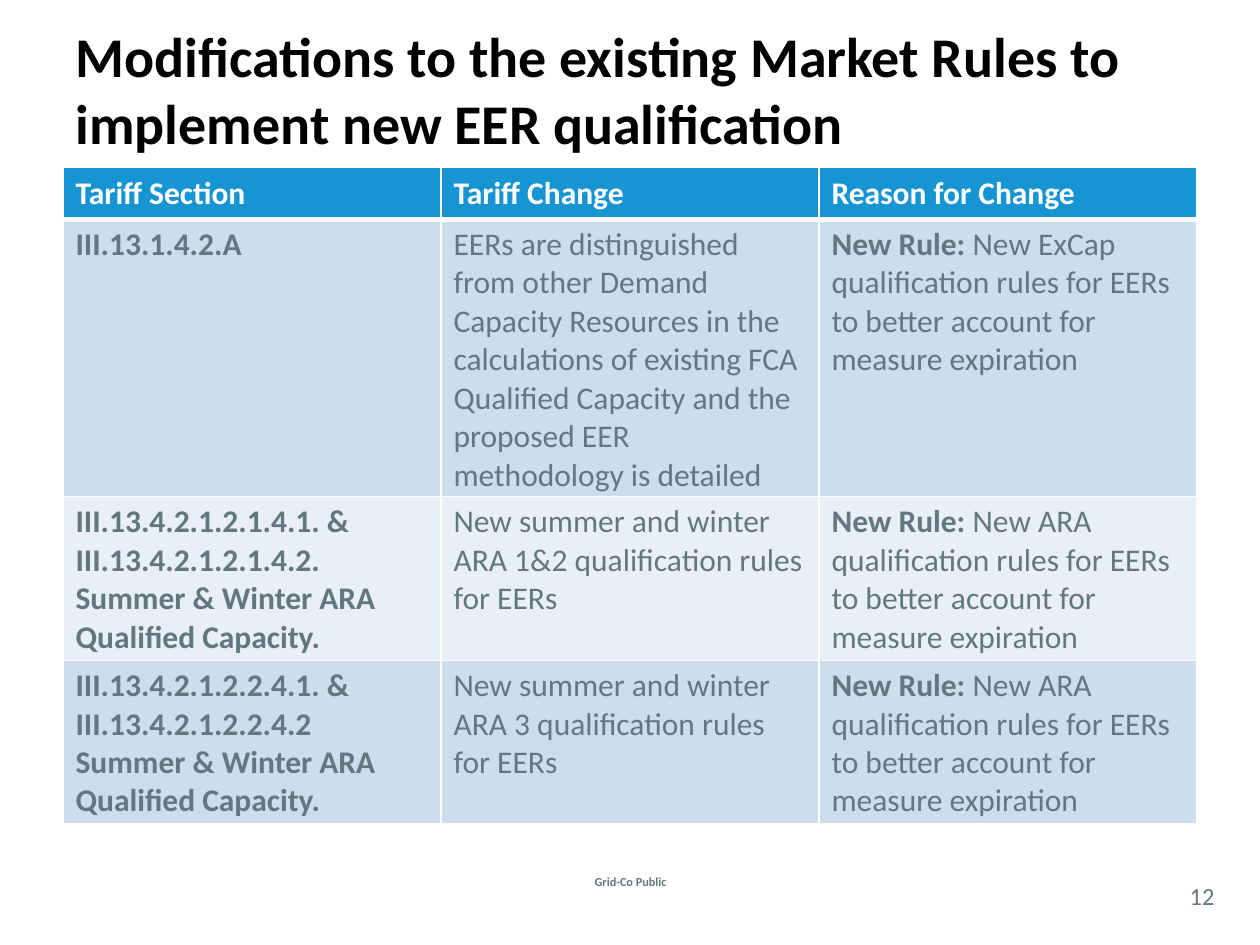
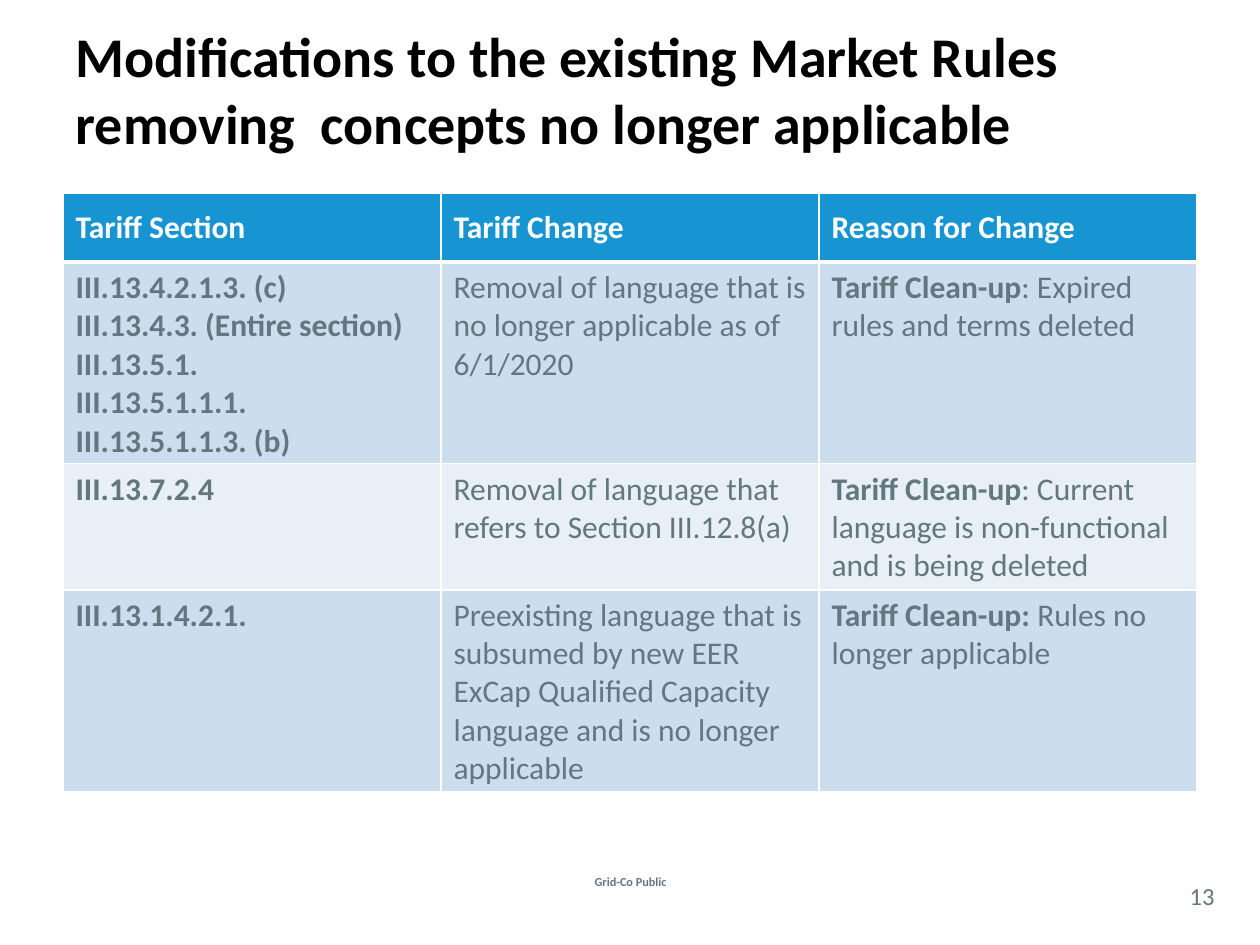
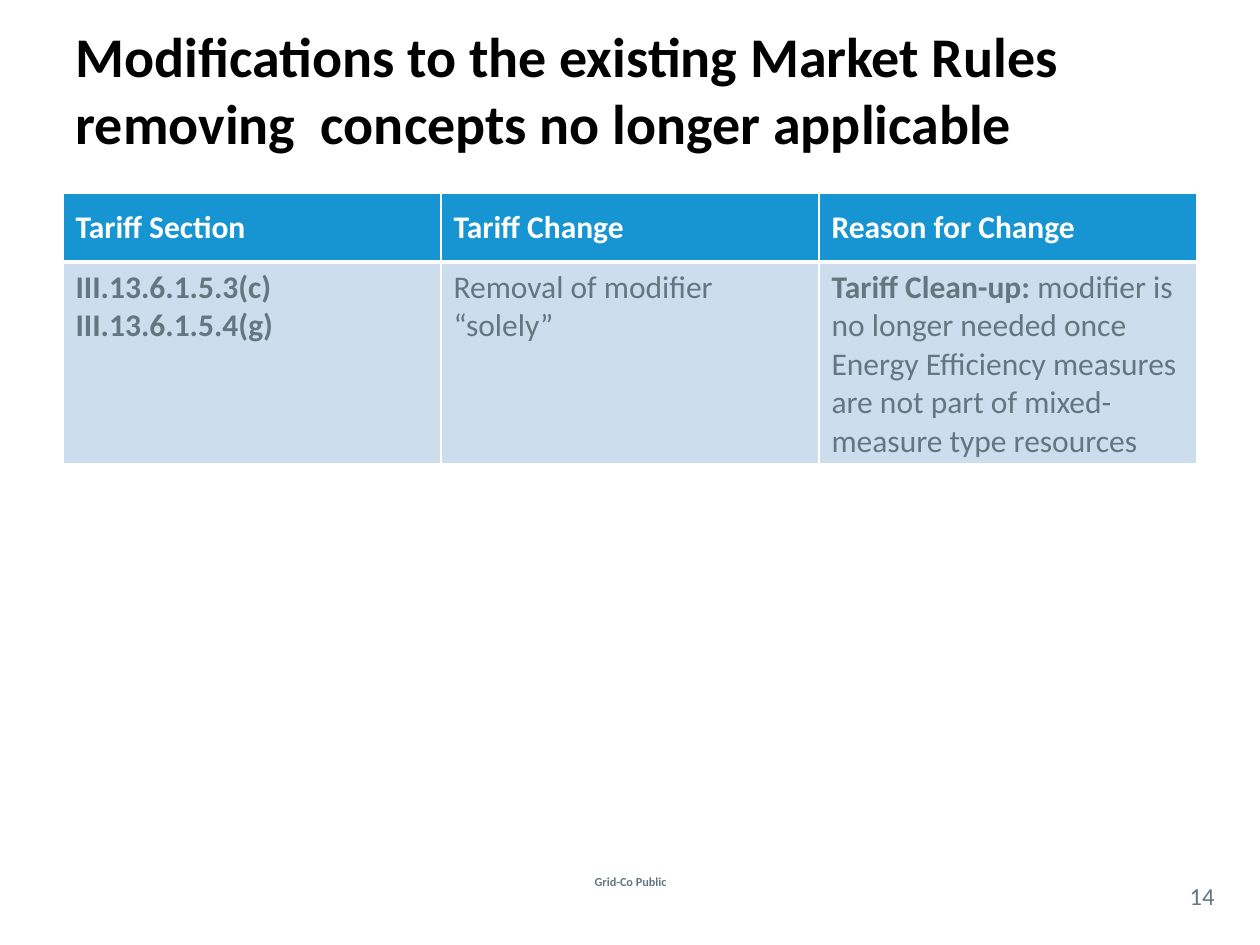
"""Build three slides that list tariff changes by section, change and reason."""
from lxml.etree import SubElement
from pptx import Presentation
from pptx.dml.color import RGBColor
from pptx.enum.text import MSO_ANCHOR, MSO_AUTO_SIZE, PP_ALIGN
from pptx.oxml.ns import qn
from pptx.util import Emu, Pt

PX = 9144
FONT = "Calibri"
BLACK = RGBColor(0x00, 0x00, 0x00)
WHITE = RGBColor(0xFF, 0xFF, 0xFF)
SLATE = RGBColor(0x62, 0x77, 0x7F)
BLUE = RGBColor(0x17, 0x95, 0xD2)
BANDS = [RGBColor(0xE8, 0xEF, 0xF7), RGBColor(0xCC, 0xDD, 0xEE)]

LEFT, COLUMN = 50, 300
LINE, CELL_MARGINS = 30, 10
HEADINGS = ["Tariff Section", "Tariff Change", "Reason for Change"]
FOOTER = "Grid-Co Public"
FIRST_NUMBER = 12
REMOVING = "Modifications to the existing Market Rules removing  concepts no longer applicable"
ARA_REASON = " New ARA qualification rules for EERs to better account for measure expiration"

SLIDES = [
    ("Modifications to the existing Market Rules to implement new EER qualification", 133, 41, [
        (7, "III.13.1.4.2.A",
         "EERs are distinguished from other Demand Capacity Resources in the calculations of "
         "existing FCA Qualified Capacity and the proposed EER methodology is detailed",
         "New Rule:",
         " New ExCap qualification rules for EERs to better account for measure expiration"),
        (4, "III.13.4.2.1.2.1.4.1. & III.13.4.2.1.2.1.4.2.\nSummer & Winter ARA Qualified Capacity.",
         "New summer and winter ARA 1&2 qualification rules for EERs", "New Rule:", ARA_REASON),
        (4, "III.13.4.2.1.2.2.4.1. & III.13.4.2.1.2.2.4.2\nSummer & Winter ARA Qualified Capacity.",
         "New summer and winter ARA 3 qualification rules for EERs", "New Rule:", ARA_REASON),
    ]),
    (REMOVING, 153, 55, [
        (5, "III.13.4.2.1.3. (c)\nIII.13.4.3. (Entire section)\nIII.13.5.1.\n"
         "III.13.5.1.1.1.\nIII.13.5.1.1.3. (b)",
         "Removal of language that is no longer applicable as of 6/1/2020",
         "Tariff Clean-up", ": Expired rules and terms deleted"),
        (3, "III.13.7.2.4", "Removal of language that refers to Section III.12.8(a)",
         "Tariff Clean-up", ": Current language is non-functional and is being deleted"),
        (5, "III.13.1.4.2.1.",
         "Preexisting language that is subsumed by new EER ExCap Qualified Capacity language "
         "and is no longer applicable",
         "Tariff Clean-up:", " Rules no longer applicable"),
    ]),
    (REMOVING, 153, 55, [
        (5, "III.13.6.1.5.3(c)\nIII.13.6.1.5.4(g)", "Removal of modifier “solely”",
         "Tariff Clean-up:",
         " modifier is no longer needed once Energy Efficiency measures are not part of "
         "mixed-measure type resources"),
    ]),
]


def style_text(frame, size, color, bold=None, align=PP_ALIGN.LEFT):
    """Format every run of a text frame; bold=None keeps each run's weight."""
    for paragraph in frame.paragraphs:
        paragraph.alignment = align
        for run in paragraph.runs:
            run.font.name = FONT
            run.font.size = Pt(size)
            run.font.color.rgb = color
            if bold is not None:
                run.font.bold = bold


def style_cell(cell, fill, row_index):
    """Give a cell white borders, heavier under the heading row, and a fill."""
    heavy_side = {0: "lnB", 1: "lnT"}.get(row_index)
    properties = cell._tc.get_or_add_tcPr()
    for side in ("lnL", "lnR", "lnT", "lnB"):
        width = Pt(3 if side == heavy_side else 1)
        border = SubElement(properties, qn(f"a:{side}"), w=str(width))
        paint = SubElement(border, qn("a:solidFill"))
        SubElement(paint, qn("a:srgbClr"), val=str(WHITE))
    cell.fill.solid()
    cell.fill.fore_color.rgb = fill


deck = Presentation()
deck.slide_width = Emu(1000 * PX)
deck.slide_height = Emu(750 * PX)

for number, (title_text, top, heading_height, changes) in enumerate(SLIDES, FIRST_NUMBER):
    page = deck.slides.add_slide(deck.slide_layouts[5])

    title = page.shapes.title
    title.left, title.top = Emu(LEFT * PX), Emu(8 * PX)
    title.width, title.height = Emu(3 * COLUMN * PX), Emu(125 * PX)
    title.text_frame.text = title_text
    title.text_frame.word_wrap = True
    title.text_frame.auto_size = MSO_AUTO_SIZE.NONE
    title.text_frame.vertical_anchor = MSO_ANCHOR.MIDDLE
    style_text(title.text_frame, 32, BLACK, True)

    for text, bounds, size, bold in (
        (FOOTER, (427, 675, 147, 50), 7, True),
        (str(number), (933, 696, 42, 29), 14, False),
    ):
        box = page.shapes.add_textbox(*(Emu(length * PX) for length in bounds))
        frame = box.text_frame
        frame.text = text
        frame.word_wrap = True
        frame.vertical_anchor = MSO_ANCHOR.MIDDLE
        frame.margin_left = frame.margin_right = frame.margin_top = frame.margin_bottom = 0
        style_text(frame, size, SLATE, bold, PP_ALIGN.CENTER)

    heights = [heading_height] + [CELL_MARGINS + LINE * change[0] for change in changes]
    table = page.shapes.add_table(
        len(heights), len(HEADINGS), Emu(LEFT * PX), Emu(top * PX),
        Emu(3 * COLUMN * PX), Emu(sum(heights) * PX),
    ).table
    for row, height in zip(table.rows, heights):
        row.height = Emu(height * PX)
    for column in table.columns:
        column.width = Emu(COLUMN * PX)

    for column_index, heading in enumerate(HEADINGS):
        cell = table.cell(0, column_index)
        cell.text_frame.text = heading
        cell.vertical_anchor = MSO_ANCHOR.MIDDLE
        style_text(cell.text_frame, 18, WHITE, True)
        style_cell(cell, BLUE, 0)

    for row_index, (_, section, change, label, reason) in enumerate(changes, 1):
        contents = [(section, ""), ("", change), (label, reason)]
        for column_index, (strong, plain) in enumerate(contents):
            cell = table.cell(row_index, column_index)
            cell.text_frame.text = strong
            style_text(cell.text_frame, 18, SLATE, True)
            if plain:
                span = cell.text_frame.paragraphs[-1].add_run()
                span.text = plain
                span.font.bold = False
            style_text(cell.text_frame, 18, SLATE)
            style_cell(cell, BANDS[row_index % 2], row_index)

deck.save("out.pptx")
